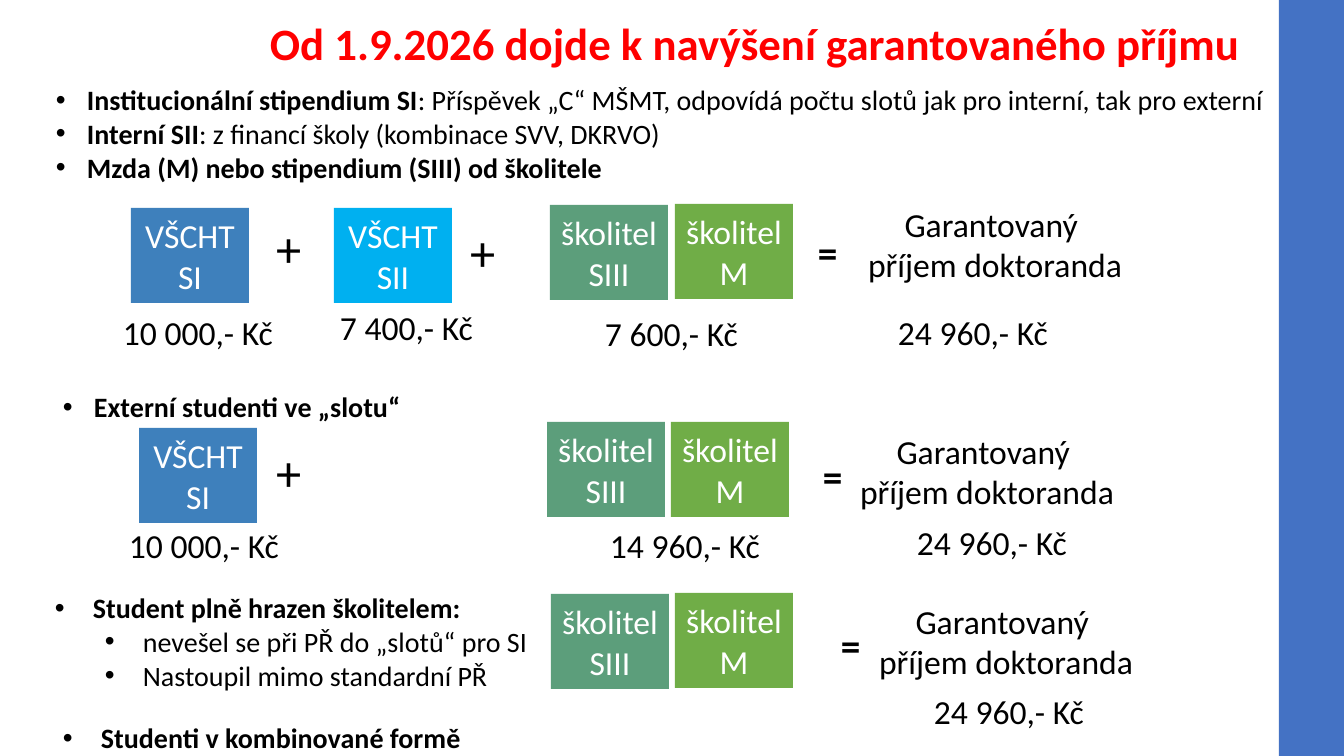
from lxml.etree import SubElement
from pptx import Presentation
from pptx.dml.color import RGBColor
from pptx.enum.shapes import MSO_SHAPE
from pptx.enum.text import MSO_ANCHOR, MSO_AUTO_SIZE, PP_ALIGN
from pptx.oxml.ns import qn
from pptx.util import Pt

PX = 12192000 / 1344

deck = Presentation()
deck.slide_width, deck.slide_height = round(1344 * PX), round(756 * PX)
slide = deck.slides.add_slide(deck.slide_layouts[6])


def add_block(box, color):
    block = slide.shapes.add_shape(MSO_SHAPE.RECTANGLE, *[round(v * PX) for v in box])
    block.shadow.inherit = False
    block.fill.solid()
    block.fill.fore_color.rgb = RGBColor.from_string(color)
    block.line.fill.background()
    return block


def add_text(box, lines, size, bold=False, color="000000", align=None, wrap=False, indents=()):
    """Each line is a list of (text, bold) runs or a string; indents are (margin, hanging, level)."""
    frame = slide.shapes.add_textbox(*[round(v * PX) for v in box]).text_frame
    frame.word_wrap = wrap
    frame.auto_size = MSO_AUTO_SIZE.SHAPE_TO_FIT_TEXT
    for i, line in enumerate(lines):
        paragraph = frame.paragraphs[0] if i == 0 else frame.add_paragraph()
        if indents:
            margin, hanging, paragraph.level = indents[i]
            properties = paragraph._p.get_or_add_pPr()
            properties.set("marL", str(round(margin * PX)))
            properties.set("indent", str(round(-hanging * PX)))
            SubElement(properties, qn("a:buFont"), typeface="Arial")
            SubElement(properties, qn("a:buChar"), char="•")
        paragraph.alignment = align
        paragraph.font.name = "Calibri"
        paragraph.font.size = Pt(size)
        paragraph.font.color.rgb = RGBColor.from_string(color)
        if isinstance(line, str):
            paragraph.font.bold = bold
            paragraph.add_run().text = line
        else:
            for text, run_bold in line:
                run = paragraph.add_run()
                run.text = text
                run.font.bold = run_bold


# Title and side bar
add_text((260, 11, 998, 65), ["Od 1.9.2026 dojde k navýšení garantovaného příjmu"],
         32, bold=True, color="FF0000")
add_block((1279, 0, 65, 756), "4472C4")

# Bulleted explanations
add_text((46, 78, 1239, 112), [
    [("Institucionální stipendium SI", True),
     (": Příspěvek „C“ MŠMT, odpovídá počtu slotů jak pro interní, tak pro externí", False)],
    [("Interní SII", True), (": z financí školy (kombinace SVV, DKRVO)", False)],
    [("Mzda (M) nebo stipendium (SIII) od školitele", True)],
], 20, indents=[(31, 31, 0)] * 3)
add_text((53, 385, 358, 44), ["Externí studenti ve „slotu“"], 20, bold=True,
         indents=[(31, 31, 0)])
add_text((45, 586, 1020, 112), [
    [("Student plně hrazen školitelem:", True)],
    [("nevešel se při PŘ do „slotů“ pro SI", False)],
    [("Nastoupil mimo standardní PŘ", False)],
], 20, wrap=True, indents=[(38, 38, 0), (88, 38, 1), (88, 38, 1)])
add_text((53, 716, 421, 44), ["Studenti v kombinované formě"], 20, bold=True,
         indents=[(38, 38, 0)])

# Income sources
SOURCES = {
    "SI": ("VŠCHT\vSI", "3E80BC"),
    "SII": ("VŠCHT SII", "00B0F0"),
    "SIII": ("školitel SIII", "5C9E7B"),
    "M": ("školitel\vM", "70AD47"),
}
for source, left, top in [
    ("SI", 131, 208), ("SII", 334, 208), ("SIII", 550, 205), ("M", 675, 204),
    ("SI", 139, 428), ("SIII", 547, 422), ("M", 671, 422),
    ("SIII", 551, 594), ("M", 675, 593),
]:
    label, color = SOURCES[source]
    frame = add_block((left, top, 118, 95), color).text_frame
    frame.word_wrap = True
    frame.vertical_anchor = MSO_ANCHOR.MIDDLE
    paragraph = frame.paragraphs[0]
    paragraph.text = label
    paragraph.alignment = PP_ALIGN.CENTER
    paragraph.font.name = "Calibri"
    paragraph.font.size = Pt(24)
    paragraph.font.color.rgb = RGBColor.from_string("FFFFFF")

# Plus and equals signs
for left, top in [(267, 212), (461, 216), (267, 436)]:
    add_text((left, top, 45, 79), ["+"], 36)
for left, top in [(808, 223), (813, 447), (831, 616)]:
    add_text((left, top, 40, 57), ["="], 28, bold=True)

# Amounts
for amount, left, top, width in [
    ("10 000,- Kč", 113, 307, 171), ("7 400,- Kč", 330, 302, 154),
    ("7 600,- Kč", 595, 308, 154), ("24 960,- Kč", 888, 307, 171),
    ("10 000,- Kč", 119, 520, 171), ("14 960,- Kč", 600, 520, 171),
    ("24 960,- Kč", 907, 517, 171), ("24 960,- Kč", 924, 686, 171),
]:
    add_text((left, top, width, 50), [amount], 24)

# Guaranteed income captions
for left, top in [(857, 199), (849, 426), (868, 596)]:
    add_text((left, top, 276, 92), ["Garantovaný ", "příjem doktoranda"], 24,
             align=PP_ALIGN.CENTER)

deck.save("out.pptx")
